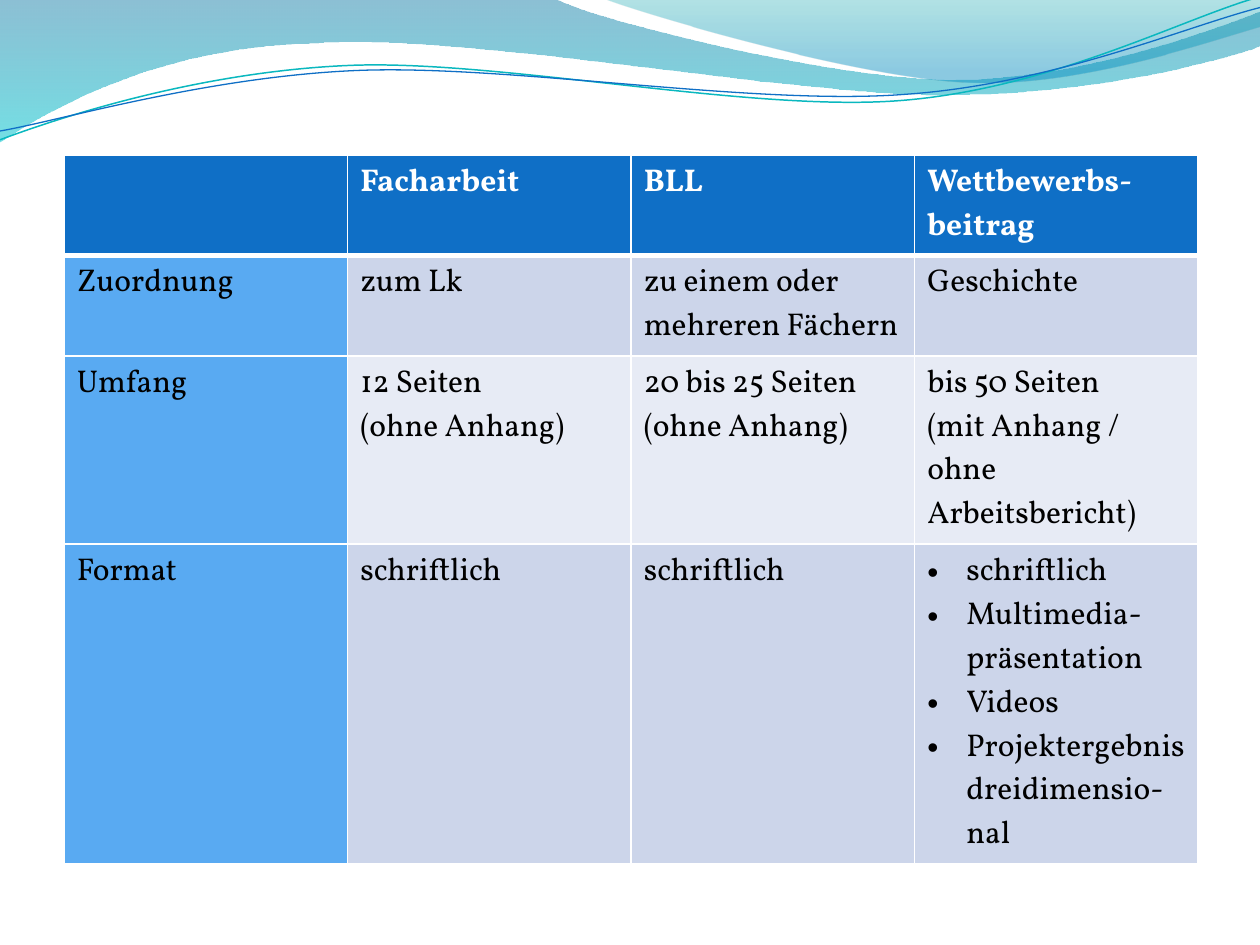
from lxml import etree
from pptx import Presentation
from pptx.dml.color import RGBColor
from pptx.oxml.ns import qn
from pptx.util import Inches, Pt

WHITE = RGBColor(0xFF, 0xFF, 0xFF)
BLACK = RGBColor(0x00, 0x00, 0x00)
BLUE = RGBColor(0x0F, 0x6F, 0xC6)
TEAL = RGBColor(0x0A, 0xB8, 0xBF)
LABEL_BLUE = RGBColor(0x59, 0xAA, 0xF2)
BAND_DARK = RGBColor(0xCC, 0xD5, 0xEA)
BAND_LIGHT = RGBColor(0xE7, 0xEB, 0xF5)
WAVE_TOP = RGBColor(0x00, 0x74, 0xA1)
WAVE_BOTTOM = RGBColor(0x00, 0xC6, 0xCF)
CREST_TOP = RGBColor(0x00, 0xA1, 0xA9)
CREST_BOTTOM = RGBColor(0x00, 0x8B, 0xBF)

FONT = "Vollkorn"

deck = Presentation()
deck.slide_width, deck.slide_height = Inches(10), Inches(7.5)
page = deck.slides.add_slide(deck.slide_layouts[6])


def add_outline(start, segments, close):
    """Draw points (x, y) and cubic curves (x1, y1, x2, y2, x, y), in inches."""
    corners = [(Inches(x), Inches(y))
               for segment in segments for x, y in zip(segment[::2], segment[1::2])]
    builder = page.shapes.build_freeform(Inches(start[0]), Inches(start[1]))
    builder.add_line_segments(corners, close=close)
    outline = builder.convert_to_shape()
    outline.shadow.inherit = False

    # Merge each three line steps of a curve into one cubic curve
    steps = iter(list(outline.element.spPr.iter(qn("a:lnTo"))))
    for segment in segments:
        group = [next(steps) for _ in segment[::2]]
        if len(group) == 3:
            curve = etree.Element(qn("a:cubicBezTo"))
            group[0].addprevious(curve)
            for step in group:
                curve.append(step[0])
                step.getparent().remove(step)
    return outline


# Translucent waves: start, segments, gradient stops (position, colour, opacity %)
waves = [
    ((0, 0),
     [(4.4, -0.01), (4.76, 0.17, 6.64, 0.63, 7.58, 0.63), (8.53, 0.63, 9.58, 0.26, 10, 0.09),
      (10.01, 0.36), (9.83, 0.44, 8.7, 0.76, 7.46, 0.75), (6.22, 0.75, 3.82, 0.28, 2.57, 0.34),
      (1.29, 0.36, 0.46, 0.83, -0.01, 1.13), (0, 0)],
     [(0, WAVE_TOP, 45), (1, WAVE_BOTTOM, 55)]),
    ((4.79, -0.01),
     [(5.09, 0.11, 6.82, 0.62, 7.69, 0.65), (8.56, 0.69, 9.61, 0.32, 10, 0.21), (10, 0),
      (4.79, -0.01)],
     [(0, CREST_TOP, 30), (0.8, CREST_BOTTOM, 45)]),
]
for start, segments, stops in waves:
    wave = add_outline(start, segments, True)
    wave.line.fill.background()
    wave.fill.gradient()
    wave.fill.gradient_angle = 270
    for stop, (position, colour, opacity) in zip(wave.fill.gradient_stops, stops):
        stop.position = position
        stop.color.rgb = colour
    for color_node, (_, _, opacity) in zip(wave.element.spPr.iter(qn("a:srgbClr")), stops):
        etree.SubElement(color_node, qn("a:alpha"), val=str(opacity * 1000))

# Thin lines below the waves
swooshes = [
    ((0, 1.11),
     [(0.48, 0.93, 1.58, 0.57, 2.77, 0.52), (3.95, 0.47, 5.93, 0.89, 7.13, 0.8),
      (8.33, 0.71, 9.38, 0.15, 9.98, -0.02)], TEAL, 0.85),
    ((0, 1.04),
     [(0.47, 0.96, 1.64, 0.61, 2.83, 0.56), (4.03, 0.51, 5.97, 0.84, 7.17, 0.75),
      (8.36, 0.67, 9.41, 0.21, 10, 0.06)], BLUE, 0.75),
]
for start, segments, colour, width in swooshes:
    swoosh = add_outline(start, segments, False)
    swoosh.fill.background()
    swoosh.line.color.rgb = colour
    swoosh.line.width = Pt(width)

# Comparison table, whose rows grow with their text
rows = [
    ["", "Facharbeit", "BLL", "Wettbewerbs-beitrag"],
    ["Zuordnung", "zum Lk", "zu einem oder mehreren Fächern", "Geschichte"],
    ["Umfang", "12 Seiten\v(ohne Anhang)", "20 bis 25 Seiten (ohne Anhang)",
     "bis 50 Seiten\n(mit Anhang / ohne Arbeitsbericht)"],
    ["Format", "schriftlich", "schriftlich",
     "schriftlich\nMultimedia- präsentation\nVideos\nProjektergebnis dreidimensio-nal"],
]
frame = page.shapes.add_table(len(rows), len(rows[0]), Inches(0.51), Inches(1.23),
                              Inches(9), Inches(4.9))
table = frame.table
table.first_col = True

for r, texts in enumerate(rows):
    table.rows[r].height = Inches(0.41)
    for c, text in enumerate(texts):
        cell = table.cell(r, c)
        cell.text_frame.text = text

        # White borders, thicker below the header
        properties = cell._tc.get_or_add_tcPr()
        for side in ("L", "R", "T", "B"):
            thick = (r, side) in ((0, "B"), (1, "T"))
            border = etree.SubElement(properties, qn(f"a:ln{side}"), w=str(Pt(3 if thick else 1)))
            solid = etree.SubElement(border, qn("a:solidFill"))
            etree.SubElement(solid, qn("a:srgbClr"), val=str(WHITE))

        cell.fill.solid()
        if r == 0:
            cell.fill.fore_color.rgb = BLUE
        elif c == 0:
            cell.fill.fore_color.rgb = LABEL_BLUE
        else:
            cell.fill.fore_color.rgb = BAND_DARK if r % 2 else BAND_LIGHT

        for para in cell.text_frame.paragraphs:
            for span in para.runs:
                span.font.name = FONT
                span.font.size = Pt(18)
                span.font.bold = r == 0
                span.font.color.rgb = WHITE if r == 0 else BLACK
frame.height = Inches(4.9)

# Bullets in the last cell
for para in table.cell(3, 3).text_frame.paragraphs:
    para_properties = para._p.get_or_add_pPr()
    para_properties.set("marL", str(Inches(0.31)))
    para_properties.set("indent", str(Inches(-0.31)))
    etree.SubElement(para_properties, qn("a:buFont"), typeface="Arial")
    etree.SubElement(para_properties, qn("a:buChar"), char="•")

deck.save("out.pptx")
